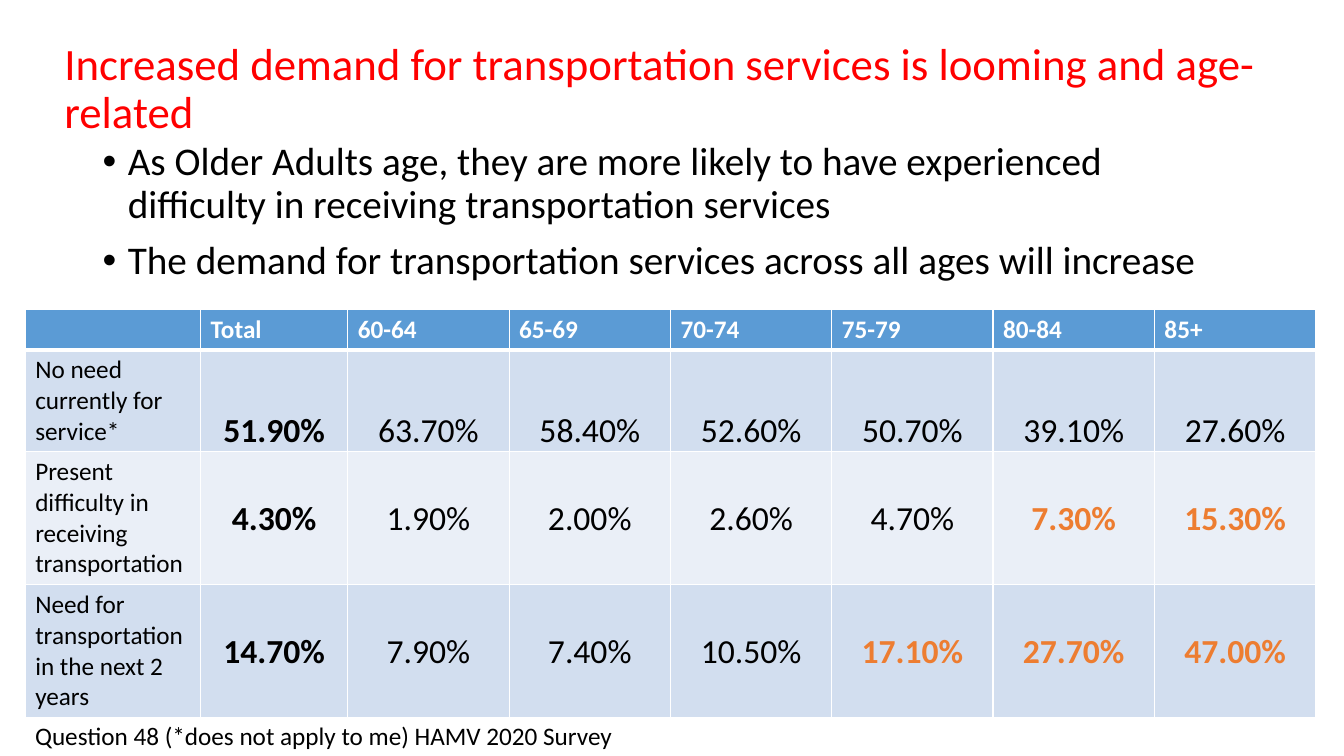
import pptx
import pptx.util
import pptx.dml.color
import pptx.enum.text
import pptx.oxml
import pptx.oxml.ns

Inches, Pt = pptx.util.Inches, pptx.util.Pt
ANCHOR = pptx.enum.text.MSO_ANCHOR
ALIGN = pptx.enum.text.PP_ALIGN

TITLE = "Increased demand for transportation services is looming and age-related"
BULLETS = [
    "As Older Adults age, they are more likely to have experienced difficulty in receiving transportation services",
    "The demand for transportation services across all ages will increase",
]
AGE_GROUPS = ["", "Total", "60-64", "65-69", "70-74", "75-79", "80-84", "85+"]
# Row label, percentages, number of highlighted percentages at the end, anchor
NEEDS = [
    ("No need currently for service*",
     [51.9, 63.7, 58.4, 52.6, 50.7, 39.1, 27.6], 0, ANCHOR.BOTTOM),
    ("Present difficulty in receiving transportation",
     [4.3, 1.9, 2.0, 2.6, 4.7, 7.3, 15.3], 2, ANCHOR.MIDDLE),
    ("Need for transportation in the next 2 years",
     [14.7, 7.9, 7.4, 10.5, 17.1, 27.7, 47.0], 3, ANCHOR.MIDDLE),
]
FOOTNOTE = "Question 48 (*does not apply to me) HAMV 2020 Survey"

THEME = {
    "font": "Calibri",
    "title": "FF0000", "text": "000000", "white": "FFFFFF",
    "header": "5B9BD5", "bands": ["D2DEEF", "EAEFF7"], "highlight": "ED7D31",
    "title_size": 32, "bullet_size": 28, "value_size": 24, "small_size": 18,
}
COLUMN_WIDTHS = [1.74, 1.46] + [1.6] * 6
ROW_HEIGHTS = [0.4, 1.01, 1.32, 1.32]


def rgb(value):
    return pptx.dml.color.RGBColor.from_string(value)


def write(frame, lines, size, color=THEME["text"], bold=False, align=ALIGN.LEFT,
          spacing=None, before=None, bullet=False):
    for index, line in enumerate(lines):
        para = frame.paragraphs[0] if index == 0 else frame.add_paragraph()
        para.alignment = align
        if spacing is not None:
            para.line_spacing = spacing
        if before is not None:
            para.space_before = Pt(before)
        if bullet:
            add_bullet(para)
        span = para.add_run()
        span.text = line
        span.font.name = THEME["font"]
        span.font.size = Pt(size)
        span.font.bold = bold
        span.font.color.rgb = rgb(color)


def add_bullet(para):
    props = para._p.get_or_add_pPr()
    props.set("marL", str(Inches(0.25)))
    props.set("indent", str(-Inches(0.25)))
    namespace = pptx.oxml.ns.nsdecls("a")
    for xml in (f'<a:buFont {namespace} typeface="Arial"/>',
                f'<a:buChar {namespace} char="•"/>'):
        props.append(pptx.oxml.parse_xml(xml))


def add_text(page, place, lines, size, anchor=ANCHOR.TOP, grow=False, **text_format):
    box = page.shapes.add_textbox(*map(Inches, place))
    frame = box.text_frame
    frame.word_wrap = True
    frame.vertical_anchor = anchor
    if grow:
        frame.auto_size = pptx.enum.text.MSO_AUTO_SIZE.SHAPE_TO_FIT_TEXT
    write(frame, lines, size, **text_format)


def style_cell(cell, fill, top=1, bottom=1):
    """Fill the cell and give it white borders, with widths in points."""
    cell.fill.solid()
    cell.fill.fore_color.rgb = rgb(fill)
    props = cell._tc.get_or_add_tcPr()
    for index, (side, width) in enumerate([("L", 1), ("R", 1), ("T", top), ("B", bottom)]):
        props.insert(index, pptx.oxml.parse_xml(
            f'<a:ln{side} {pptx.oxml.ns.nsdecls("a")} w="{Pt(width)}"><a:solidFill>'
            f'<a:srgbClr val="{THEME["white"]}"/></a:solidFill></a:ln{side}>'))


def add_needs_table(page):
    table = page.shapes.add_table(
        len(ROW_HEIGHTS), len(COLUMN_WIDTHS), Inches(0.25), Inches(3.07),
        Inches(sum(COLUMN_WIDTHS)), Inches(sum(ROW_HEIGHTS))).table
    table.horz_banding = False
    for column, width in zip(table.columns, COLUMN_WIDTHS):
        column.width = Inches(width)
    for row, height in zip(table.rows, ROW_HEIGHTS):
        row.height = Inches(height)

    for col, group in enumerate(AGE_GROUPS):
        cell = table.cell(0, col)
        style_cell(cell, THEME["header"], bottom=3)
        if group:
            write(cell.text_frame, [group], THEME["small_size"],
                  color=THEME["white"], bold=True)

    for row, (label, values, highlights, anchor) in enumerate(NEEDS, start=1):
        fill = THEME["bands"][(row - 1) % 2]
        top = 3 if row == 1 else 1
        label_cell = table.cell(row, 0)
        style_cell(label_cell, fill, top=top)
        write(label_cell.text_frame, [label], THEME["small_size"])
        for col, value in enumerate(values, start=1):
            cell = table.cell(row, col)
            style_cell(cell, fill, top=top)
            cell.vertical_anchor = anchor
            cell.margin_left = cell.margin_right = cell.margin_top = Inches(0.01)
            cell.margin_bottom = 0
            highlighted = col > len(values) - highlights
            write(cell.text_frame, [f"{value:.2f}%"], THEME["value_size"],
                  color=THEME["highlight"] if highlighted else THEME["text"],
                  bold=highlighted or col == 1, align=ALIGN.CENTER)


def main():
    deck = pptx.Presentation()
    deck.slide_width, deck.slide_height = Inches(13.33), Inches(7.5)
    page = deck.slides.add_slide(deck.slide_layouts[6])
    add_text(page, (0.54, 0.17, 12.26, 1.45), [TITLE], THEME["title_size"],
             anchor=ANCHOR.MIDDLE, color=THEME["title"], spacing=0.9)
    add_text(page, (0.92, 1.36, 11.5, 4.76), BULLETS, THEME["bullet_size"],
             spacing=0.9, before=10, bullet=True)
    add_needs_table(page)
    add_text(page, (0.25, 7.1, 5.96, 0.4), [FOOTNOTE], THEME["small_size"], grow=True)
    deck.save("out.pptx")


if __name__ == "__main__":
    main()
